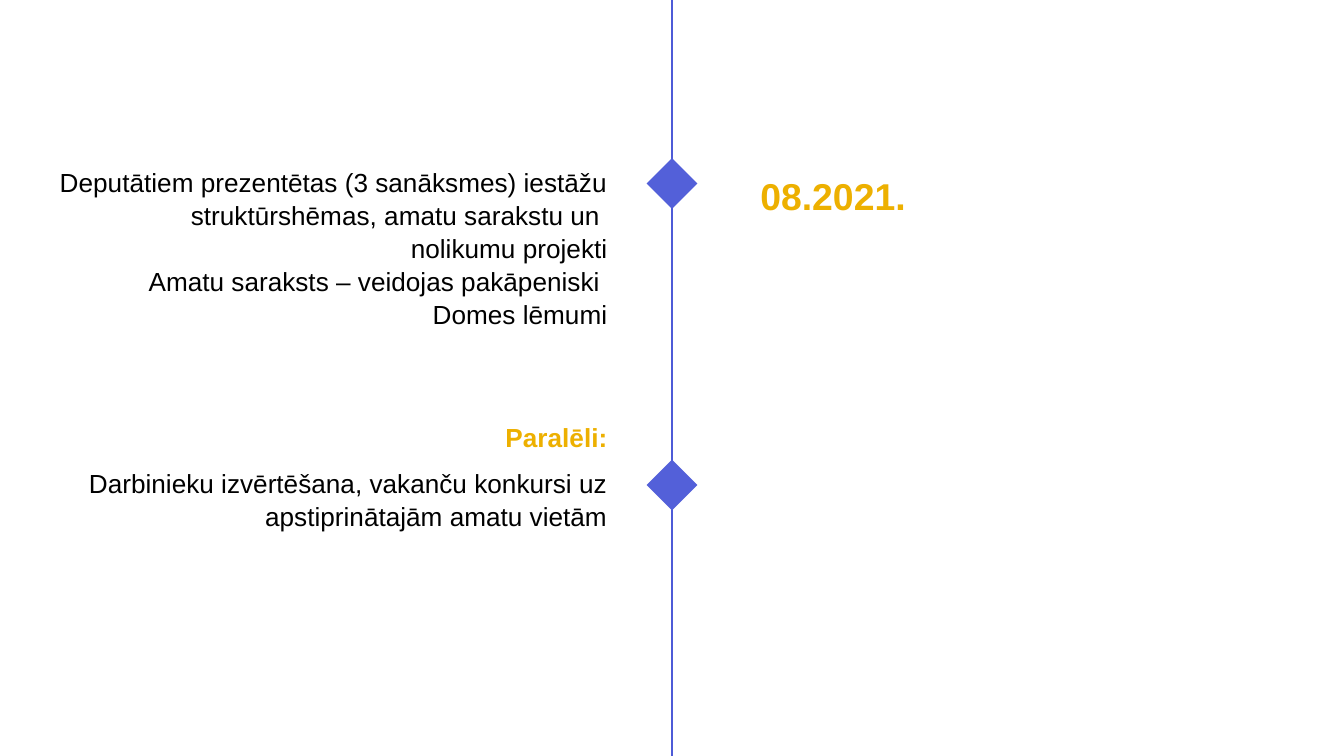
import pptx
import pptx.util
import pptx.dml.color
import pptx.enum.shapes
import pptx.enum.text
import pptx.oxml.ns
import lxml.etree

Cm = pptx.util.Cm
RGBColor = pptx.dml.color.RGBColor
ALIGN = pptx.enum.text.PP_ALIGN

LINE_BLUE = RGBColor(0x4E, 0x5B, 0xD7)
MARKER_BLUE = RGBColor(0x53, 0x60, 0xD9)
GOLD = RGBColor(0xED, 0xB0, 0x00)
BLACK = RGBColor(0, 0, 0)

AXIS_X = 12.7
MARKER_SIZE = 0.68
LEFT_X, LEFT_W = 0.58, 11.15


def add_axis(s):
    line = s.shapes.add_connector(
        pptx.enum.shapes.MSO_CONNECTOR.STRAIGHT,
        Cm(AXIS_X), Cm(-0.3), Cm(AXIS_X), Cm(14.45))
    line.line.color.rgb = LINE_BLUE
    line.line.width = pptx.util.Pt(1.5)
    lxml.etree.SubElement(line._element.spPr, pptx.oxml.ns.qn("a:effectLst"))


def add_marker(s, center_y):
    """Add a square turned into a diamond, centred on the axis."""
    sp = s.shapes.add_shape(
        pptx.enum.shapes.MSO_SHAPE.RECTANGLE,
        Cm(AXIS_X - MARKER_SIZE / 2), Cm(center_y - MARKER_SIZE / 2),
        Cm(MARKER_SIZE), Cm(MARKER_SIZE))
    sp.rotation = 45
    sp.shadow.inherit = False
    sp.fill.solid()
    sp.fill.fore_color.rgb = MARKER_BLUE
    sp.line.fill.background()


def add_text(s, left, top, width, height, lines, size=14, color=BLACK,
             bold=False, align=ALIGN.RIGHT):
    sp = s.shapes.add_textbox(Cm(left), Cm(top), Cm(width), Cm(height))
    tf = sp.text_frame
    tf.word_wrap = True
    tf.auto_size = pptx.enum.text.MSO_AUTO_SIZE.SHAPE_TO_FIT_TEXT
    tf.text = "\n".join(lines)
    for p in tf.paragraphs:
        p.alignment = align
        p.line_spacing = 1.05
        for r in p.runs:
            r.font.name = "Arial"
            r.font.size = pptx.util.Pt(size)
            r.font.bold = bold
            r.font.color.rgb = color


def main():
    prs = pptx.Presentation()
    prs.slide_width, prs.slide_height = Cm(25.4), Cm(14.29)
    s = prs.slides.add_slide(prs.slide_layouts[6])

    add_axis(s)
    for center_y in (3.47, 9.17):
        add_marker(s, center_y)

    add_text(s, LEFT_X, 3, LEFT_W, 3.25, [
        "Deputātiem prezentētas (3 sanāksmes) iestāžu struktūrshēmas, "
        "amatu sarakstu un ",
        "nolikumu projekti",
        "Amatu saraksts – veidojas pakāpeniski ",
        "Domes lēmumi",
    ])
    add_text(s, 14.12, 3.1, 9.5, 1.12, ["08.2021."], size=20, color=GOLD,
             bold=True, align=ALIGN.LEFT)
    add_text(s, LEFT_X, 8.69, LEFT_W, 1.45, [
        "Darbinieku izvērtēšana, vakanču konkursi uz "
        "apstiprinātajām amatu vietām",
    ])
    add_text(s, LEFT_X, 7.82, LEFT_W, 0.86, ["Paralēli:"], color=GOLD,
             bold=True)

    prs.save("out.pptx")


if __name__ == "__main__":
    main()
